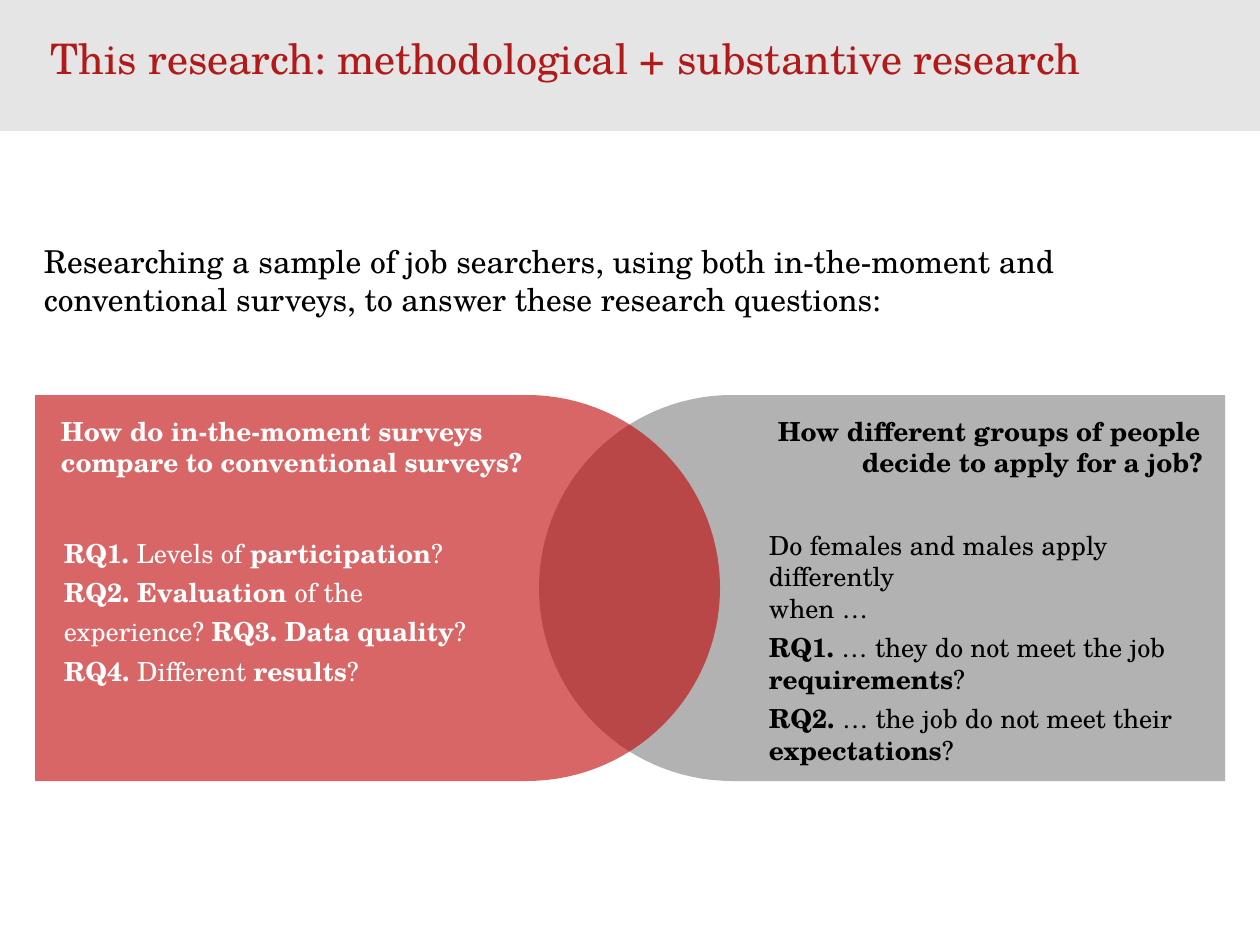
"""Build the slide that pairs methodological with substantive research questions."""
import math

import pptx
import pptx.dml.color
import pptx.enum.shapes
import pptx.enum.text
import pptx.oxml.ns
import pptx.util

EMU_PER_PX = 914400 / 126
FONT = "TeX Gyre Schola"
ALIGN = pptx.enum.text.PP_ALIGN
ANCHOR = pptx.enum.text.MSO_ANCHOR
RED, GREY, BAND, BLACK, WHITE = "C00000", "7F7F7F", "7D7D7D", "000000", "FFFFFF"
BODY_GAP = {"space_before": pptx.util.Pt(4.5)}


def emu(px):
    """Turn px into EMU."""
    return pptx.util.Emu(round(px * EMU_PER_PX))


def colour(value):
    """Turn a hex string into a colour."""
    return pptx.dml.color.RGBColor.from_string(value)


def apply_format(target, values):
    """Set each named attribute on the target."""
    for name, value in values.items():
        setattr(target, name, value)


def paint(shape, fill, opacity):
    """Give a shape a see-through fill, with no line or shadow."""
    shape.shadow.inherit = False
    shape.line.fill.background()
    shape.fill.solid()
    shape.fill.fore_color.rgb = colour(fill)
    tint = shape._element.spPr.find(".//" + pptx.oxml.ns.qn("a:srgbClr"))
    alpha = tint.makeelement(pptx.oxml.ns.qn("a:alpha"), {"val": str(opacity * 1000)})
    tint.append(alpha)


def write(frame, paragraphs, size, ink, bold=False, anchor=ANCHOR.TOP):
    """Fill a text frame; ** switches the weight within a paragraph."""
    apply_format(frame, {
        "word_wrap": True, "auto_size": pptx.enum.text.MSO_AUTO_SIZE.NONE,
        "vertical_anchor": anchor, "margin_left": 0, "margin_right": 0,
        "margin_top": emu(1), "margin_bottom": 0,
    })
    for index, (text, values) in enumerate(paragraphs):
        para = frame.add_paragraph() if index else frame.paragraphs[0]
        apply_format(para, values)
        for part, piece in enumerate(text.split("**")):
            if piece:
                span = para.add_run()
                span.text = piece
                apply_format(span.font, {
                    "name": FONT, "size": pptx.util.Pt(size),
                    "bold": bold or part % 2 == 1,
                })
                span.font.color.rgb = colour(ink)


def add_text(page, box, paragraphs, size, ink, bold=False):
    """Add a text box at the given box and return its frame."""
    frame = page.shapes.add_textbox(*map(emu, box)).text_frame
    write(frame, paragraphs, size, ink, bold)
    return frame


def add_half_pill(page, box, fill, round_right):
    """Add a panel with one half-round end."""
    left, top, width, height = box
    radius = height / 2
    outline = [(0, 0)]
    for step in range(61):
        angle = math.pi * (step / 60 - 0.5)
        outline.append((width - radius + radius * math.cos(angle),
                        radius + radius * math.sin(angle)))
    outline.append((0, height))
    points = [(emu(left + (x if round_right else width - x)), emu(top + y))
              for x, y in outline]
    builder = page.shapes.build_freeform(*points[0], scale=1.0)
    builder.add_line_segments(points[1:], close=True)
    paint(builder.convert_to_shape(), fill, 60)


def add_title(page, box):
    """Place and fill the title."""
    title = page.shapes.title
    apply_format(title, dict(zip(("left", "top", "width", "height"), map(emu, box))))
    write(title.text_frame,
          [("This research: methodological + substantive research",
            {"alignment": ALIGN.CENTER})],
          24, RED, anchor=ANCHOR.MIDDLE)


def add_substantive(page, box):
    """Add the grey panel on job applications."""
    left, top, width, height = box
    add_half_pill(page, box, GREY, False)
    heading = add_text(
        page, (left + 238, top + 19, 430, 66),
        [("How different groups of people decide to apply for a job?", {})],
        15, BLACK, True)
    properties = heading.paragraphs[0]._p.get_or_add_pPr()
    properties.set("marL", str(emu(85)))
    properties.set("indent", str(emu(-84)))
    add_text(page, (left + 230, top + 133, 452, 210), [
        ("Do females and males apply differently", {}),
        ("when …", {}),
        ("**RQ1. **… they do not meet the job", BODY_GAP),
        ("**requirements**?", {}),
        ("**RQ2. **… the job do not meet their", BODY_GAP),
        ("**expectations**?", {}),
    ], 15, BLACK)


def add_methodological(page, box):
    """Add the red panel on survey methods."""
    left, top, width, height = box
    add_half_pill(page, box, RED, True)
    add_text(page, (left + 29, top + 133, 438, 161), [
        ("**RQ1. **Levels of **participation**? **RQ2. Evaluation **of the "
         "experience? **RQ3. Data quality**?", {"line_spacing": 1.25}),
        ("**RQ4. **Different **results**?", BODY_GAP),
    ], 15, WHITE)
    add_text(page, (left + 26, top + 19, 466, 66),
             [("How do in-the-moment surveys compare to conventional surveys?", {})],
             15, WHITE, True)


def add_band(page, box):
    """Add the see-through band over the title."""
    band = page.shapes.add_shape(
        pptx.enum.shapes.MSO_SHAPE.RECTANGLE, *map(emu, box))
    paint(band, BAND, 20)


def main():
    """Build and save the deck."""
    deck = pptx.Presentation()
    deck.slide_width, deck.slide_height = emu(1260), emu(945)
    page = deck.slides.add_slide(deck.slide_layouts[5])
    add_title(page, (11, 31, 1108, 52))
    add_text(page, (44, 241, 1162, 78),
             [("Researching a sample of job searchers, using both in-the-moment and "
               "conventional surveys, to answer these research questions:", {})],
             18, BLACK)
    add_substantive(page, (539, 395, 686, 386))
    add_methodological(page, (35, 395, 685, 386))
    add_band(page, (0, 0, 1260, 131))
    deck.save("out.pptx")


if __name__ == "__main__":
    main()
